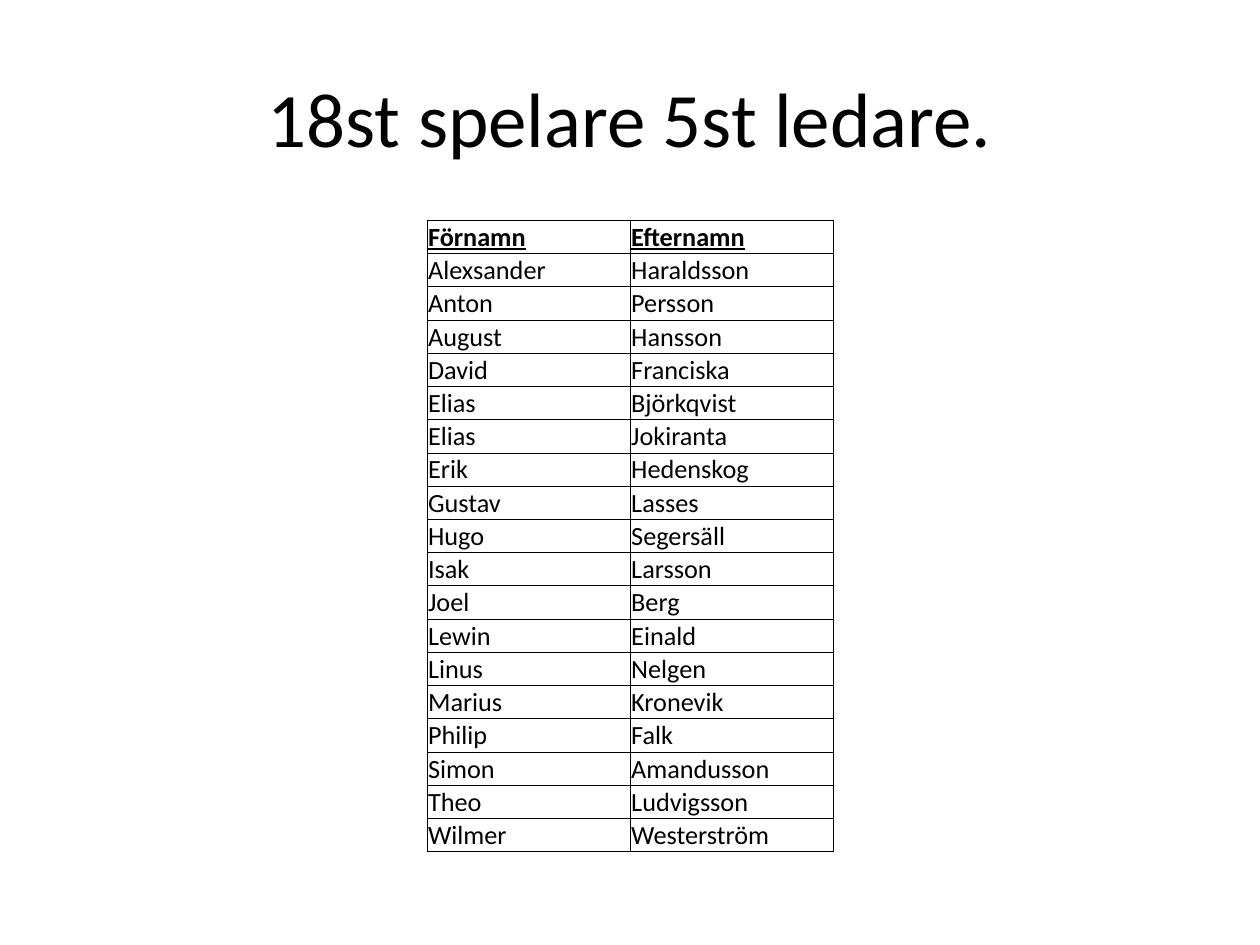
from lxml.etree import SubElement
from pptx import Presentation
from pptx.dml.color import RGBColor
from pptx.enum.text import MSO_ANCHOR as Anchor, PP_ALIGN as Align
from pptx.oxml.ns import qn
from pptx.util import Cm, Pt

FONT = "Calibri"
BLACK = "000000"
HEADER = ("Förnamn", "Efternamn")
PLAYERS = [
    ("Alexsander", "Haraldsson"),
    ("Anton", "Persson"),
    ("August", "Hansson"),
    ("David", "Franciska"),
    ("Elias", "Björkqvist"),
    ("Elias", "Jokiranta"),
    ("Erik", "Hedenskog"),
    ("Gustav", "Lasses"),
    ("Hugo", "Segersäll"),
    ("Isak", "Larsson"),
    ("Joel", "Berg"),
    ("Lewin", "Einald"),
    ("Linus", "Nelgen"),
    ("Marius", "Kronevik"),
    ("Philip", "Falk"),
    ("Simon", "Amandusson"),
    ("Theo", "Ludvigsson"),
    ("Wilmer", "Westerström"),
]


def color(value):
    return RGBColor.from_string(value)


def style_font(font, size):
    font.name = FONT
    font.size = Pt(size)
    font.color.rgb = color(BLACK)


def add_title(slide, text, left, top, width, height):
    shape = slide.shapes.add_textbox(Cm(left), Cm(top), Cm(width), Cm(height))
    frame = shape.text_frame
    frame.word_wrap = True
    frame.vertical_anchor = Anchor.MIDDLE
    paragraph = frame.paragraphs[0]
    paragraph.text = text
    paragraph.alignment = Align.CENTER
    style_font(paragraph.font, 44)


def add_borders(cell, width=0.5):
    properties = cell._tc.get_or_add_tcPr()
    for side in ("a:lnL", "a:lnR", "a:lnT", "a:lnB"):
        line = SubElement(properties, qn(side), w=str(Pt(width)))
        fill = SubElement(line, qn("a:solidFill"))
        SubElement(fill, qn("a:srgbClr"), val=BLACK)


def fill_cell(cell, text, is_header):
    add_borders(cell)
    cell.fill.background()
    cell.vertical_anchor = Anchor.BOTTOM
    cell.margin_left = cell.margin_right = cell.margin_top = Cm(0.02)
    cell.margin_bottom = 0
    paragraph = cell.text_frame.paragraphs[0]
    paragraph.text = text
    style_font(paragraph.font, 15)
    paragraph.font.bold = is_header
    paragraph.font.underline = is_header


def add_roster(slide, rows, left, top, width, row_height):
    column_count = len(rows[0])
    frame = slide.shapes.add_table(
        len(rows), column_count, Cm(left), Cm(top), Cm(width), Cm(row_height * len(rows))
    )
    table = frame.table
    table.first_row = table.horz_banding = False
    for column in table.columns:
        column.width = Cm(width / column_count)
    for row_index, names in enumerate(rows):
        table.rows[row_index].height = Cm(row_height)
        for column_index, name in enumerate(names):
            fill_cell(table.cell(row_index, column_index), name, row_index == 0)


def main():
    presentation = Presentation()
    presentation.slide_width = Cm(25.4)
    presentation.slide_height = Cm(19.05)
    slide = presentation.slides.add_slide(presentation.slide_layouts[6])
    add_title(slide, "18st spelare 5st ledare.", 1.27, 0.76, 22.86, 3.18)
    add_roster(slide, [HEADER, *PLAYERS], 8.61, 4.44, 8.19, 0.67)
    presentation.save("out.pptx")


if __name__ == "__main__":
    main()
